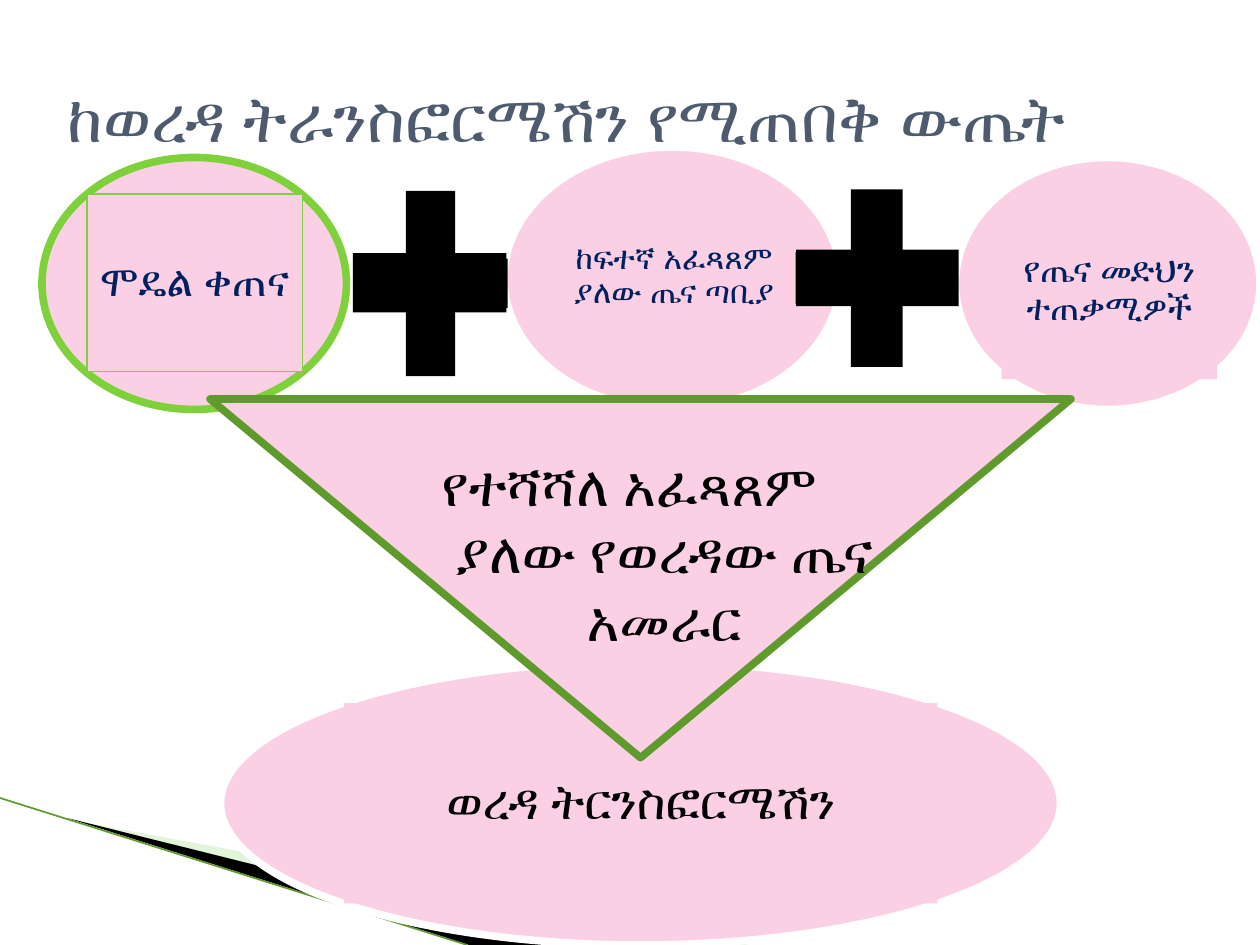
from lxml import etree
from pptx import Presentation
from pptx.dml.color import RGBColor
from pptx.enum.shapes import MSO_CONNECTOR, MSO_SHAPE
from pptx.enum.text import MSO_ANCHOR, PP_ALIGN
from pptx.oxml.ns import qn
from pptx.util import Pt

OVAL, RECTANGLE = MSO_SHAPE.OVAL, MSO_SHAPE.RECTANGLE
PLUS, TRIANGLE = MSO_SHAPE.MATH_PLUS, MSO_SHAPE.ISOSCELES_TRIANGLE
STRAIGHT = MSO_CONNECTOR.STRAIGHT
MIDDLE, TOP = MSO_ANCHOR.MIDDLE, MSO_ANCHOR.TOP
CENTER = PP_ALIGN.CENTER

PINK = RGBColor(0xFB, 0xD0, 0xE4)
BLACK = RGBColor(0, 0, 0)
WHITE = RGBColor(0xFF, 0xFF, 0xFF)
NAVY = RGBColor(0x00, 0x20, 0x60)
SLATE = RGBColor(0x4E, 0x5B, 0x6F)
LIME = RGBColor(0x7F, 0xD1, 0x3B)
GREEN = RGBColor(0x5E, 0x9B, 0x2C)
PALE_GREEN = RGBColor(0xB8, 0xE7, 0xA1)

SANS, MONO = "Lato", "DejaVu Sans Mono"
THICK = 4.33


def style_shape(shape, fill, line=None, width=THICK):
    shape.shadow.inherit = False
    shape.fill.solid()
    shape.fill.fore_color.rgb = fill
    if line is None:
        shape.line.fill.background()
    else:
        shape.line.color.rgb = line
        shape.line.width = Pt(width)


def add_shape(slide, kind, box, fill, line=None, width=THICK):
    shape = slide.shapes.add_shape(kind, *map(Pt, box))
    style_shape(shape, fill, line, width)
    return shape


def write_text(shape, text, size, color=BLACK, font=MONO, bold=False, anchor=MIDDLE,
               spacing=None, inset=None, left_margin=0, indent=0):
    frame = shape.text_frame
    frame.word_wrap = True
    frame.vertical_anchor = anchor
    if inset is not None:
        frame.margin_left = frame.margin_right = Pt(inset)
        frame.margin_top = frame.margin_bottom = Pt(inset)
    paragraph = frame.paragraphs[0]
    paragraph.alignment = CENTER
    paragraph.line_spacing = spacing
    if left_margin:
        properties = paragraph._p.get_or_add_pPr()
        properties.set("marL", str(Pt(left_margin)))
        properties.set("indent", str(Pt(indent)))
    run = paragraph.add_run()
    run.text = text
    run.font.name = font
    run.font.size = Pt(size)
    run.font.bold = bold
    run.font.color.rgb = color


def add_text_box(slide, box, text, **text_format):
    write_text(slide.shapes.add_textbox(*map(Pt, box)), text, **text_format)


def add_oval(slide, oval_box, label_box, text, outline=WHITE, label_line=None, **text_format):
    add_shape(slide, OVAL, oval_box, PINK, outline)
    label = add_shape(slide, RECTANGLE, label_box, PINK, label_line, 0.75)
    write_text(label, text, spacing=0.9, **text_format)


def add_plus(slide, plus_box, bar_box):
    add_shape(slide, PLUS, plus_box, BLACK)
    add_shape(slide, RECTANGLE, bar_box, BLACK)


def add_wedge(slide, points, fill, opacity=None):
    start, *rest = [(Pt(x), Pt(y)) for x, y in points]
    builder = slide.shapes.build_freeform(*start)
    builder.add_line_segments(rest, close=True)
    shape = builder.convert_to_shape()
    style_shape(shape, fill)
    if opacity is not None:
        color = shape._element.spPr.find(qn("a:solidFill"))[0]
        etree.SubElement(color, qn("a:alpha")).set("val", str(opacity * 1000))


def add_line(slide, start, end, color, width):
    line = slide.shapes.add_connector(STRAIGHT, *map(Pt, start + end))
    line.line.color.rgb = color
    line.line.width = Pt(width)
    etree.SubElement(line._element.spPr, qn("a:effectLst"))


def add_corner_decoration(slide):
    add_wedge(slide, [(39.5, 468.5), (428, 540), (328, 540)], PALE_GREEN, opacity=40)
    add_wedge(slide, [(38.5, 467.5), (329, 540), (268, 540)], BLACK)
    add_line(slide, (0, 456), (267, 540), GREEN, 0.95)


def main():
    presentation = Presentation()
    presentation.slide_width, presentation.slide_height = Pt(720), Pt(540)
    slide = presentation.slides.add_slide(presentation.slide_layouts[6])

    add_corner_decoration(slide)
    add_oval(slide, (126, 378, 480, 162), (196.6, 401.8, 339.1, 114.5),
             "ወረዳ ትርንስፎርሜሽን", size=28, font=SANS, inset=2.9)
    add_oval(slide, (24, 90, 174, 144), (49.7, 110.9, 123.1, 101.5),
             "ሞዴል ቀጠና", outline=LIME, label_line=LIME, size=24, color=NAVY, inset=2.2)
    add_oval(slide, (546, 90, 174, 144), (572.4, 115.2, 123.1, 101.5),
             "የጤና መድህን ተጠቃሚዎች", size=20, color=NAVY, inset=2.2)
    add_oval(slide, (288, 84, 192, 150), (324, 108, 122.4, 100),
             "ከፍተኛ አፈጻጸም ያለው ጤና ጣቢያ", size=18, color=NAVY, bold=True, inset=2.2)
    add_plus(slide, (186, 90, 120, 144), (201.6, 144.7, 87.8, 33.8))
    add_plus(slide, (438, 90, 126, 138), (455, 142.6, 92.9, 32.4))
    add_text_box(slide, (0, 21.6, 648, 90), "ከወረዳ ትራንስፎርሜሽን የሚጠበቅ ውጤት",
                 size=36.9, color=SLATE, bold=True)
    triangle = add_shape(slide, TRIANGLE, (120, 228, 492, 205), PINK, GREEN)
    triangle.rotation = 180
    add_text_box(slide, (180, 254, 330, 122), "የተሻሻለ አፈጻጸም ያለው የወረዳው ጤና አመራር",
                 size=32, anchor=TOP, left_margin=69, indent=-40)

    presentation.save("out.pptx")


if __name__ == "__main__":
    main()
